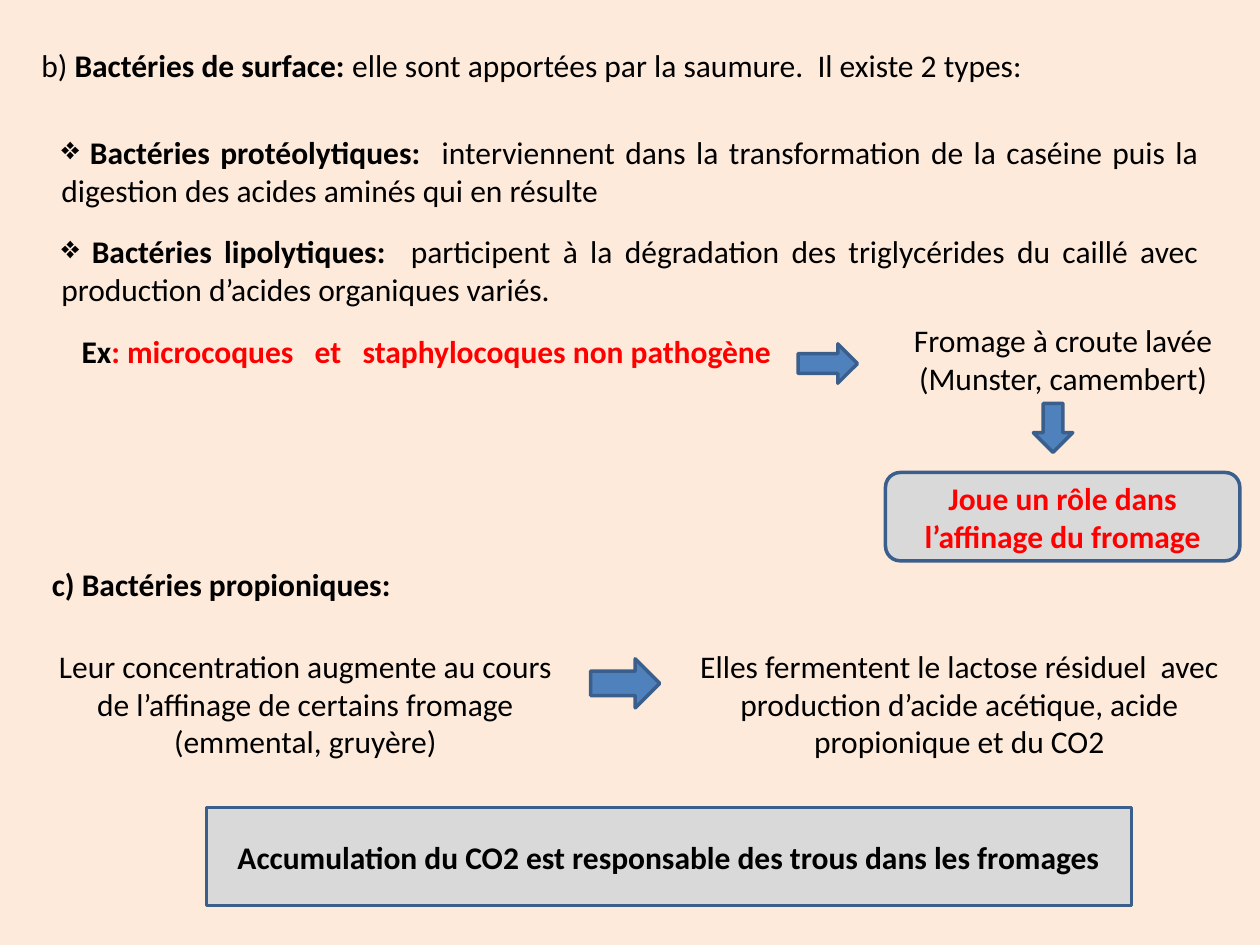
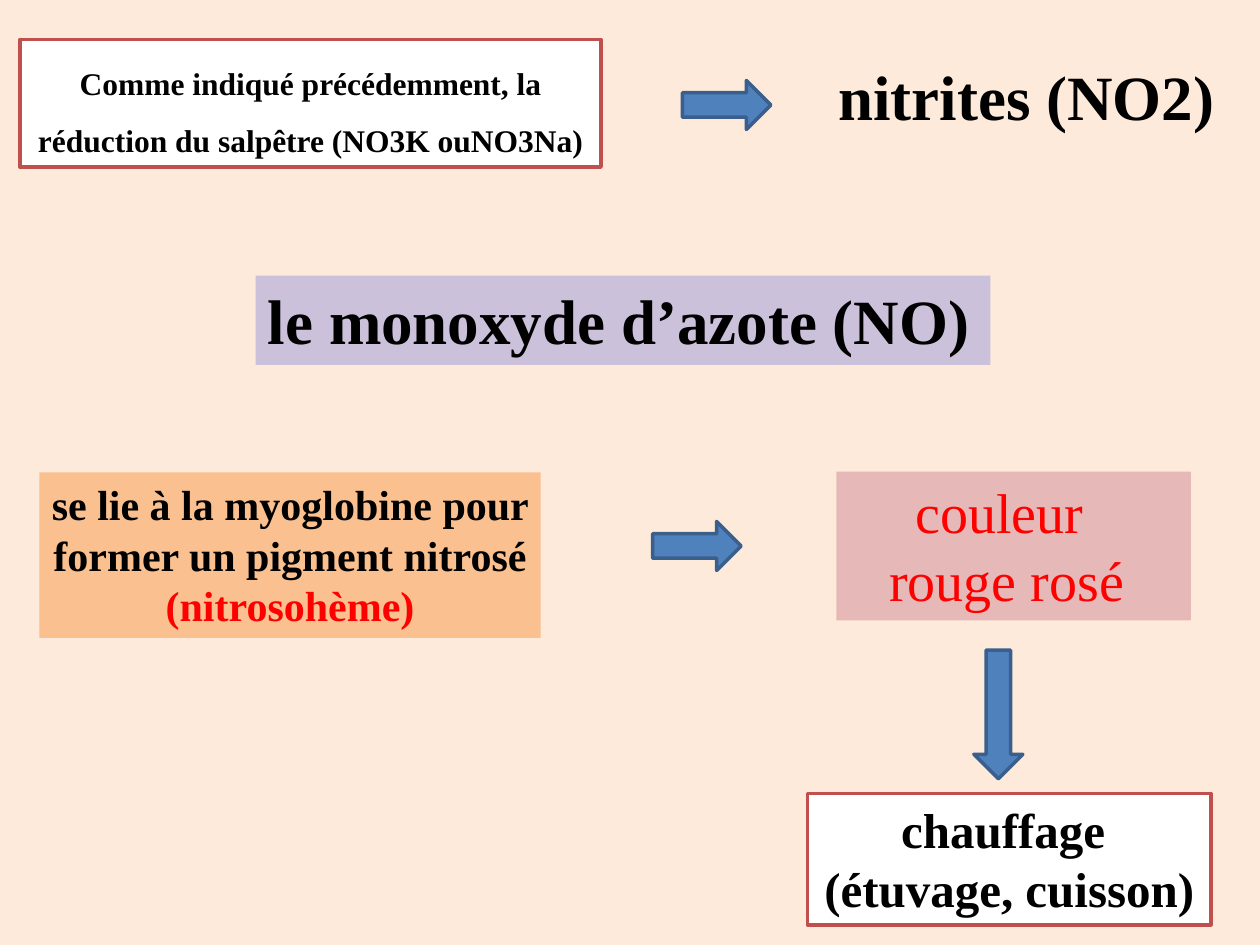
from lxml import etree
from pptx import Presentation
from pptx.dml.color import RGBColor
from pptx.enum import shapes, text
from pptx.oxml import ns
from pptx.util import Pt

CREAM = RGBColor(0xFD, 0xEA, 0xDA)
BLACK = RGBColor(0, 0, 0)
WHITE = RGBColor(255, 255, 255)
RED = RGBColor(255, 0, 0)
BLUE = RGBColor(0x4F, 0x81, 0xBD)
NAVY = RGBColor(0x3A, 0x5F, 0x8C)
BRICK = RGBColor(0xC0, 0x50, 0x4D)
GREY = RGBColor(0xD9, 0xD9, 0xD9)
LILAC = RGBColor(0xCC, 0xC1, 0xDA)
ORANGE = RGBColor(0xFA, 0xC0, 0x90)
PINK = RGBColor(0xE6, 0xB9, 0xB8)

SHAPE = shapes.MSO_SHAPE
RIGHT, DOWN = SHAPE.RIGHT_ARROW, SHAPE.DOWN_ARROW
LEFT, CENTER, JUSTIFY = text.PP_ALIGN.LEFT, text.PP_ALIGN.CENTER, text.PP_ALIGN.JUSTIFY

# Runs are (text, bold, colour); boxes are (left, top, width, height) in points
BULLETED = dict(align=JUSTIFY, bullet="❖")
CENTERED = dict(align=CENTER)
KEY_BOX = dict(align=CENTER, fill=GREY, line=NAVY, middle=True)
FRAMED = dict(align=CENTER, fill=WHITE, line=BRICK)

BACTERIA = dict(
    font="Calibri",
    blocks=[
        ((16.5, 22.5, 602, 29),
         [[("b) ", False, BLACK), ("Bactéries de surface:", True, BLACK),
           (" elle sont apportées par la saumure.  Il existe 2 types:", False, BLACK)]], {}),
        ((28, 72.5, 664, 51),
         [[(" Bactéries protéolytiques:  ", True, BLACK),
           ("interviennent dans la transformation de la caséine puis la "
            "digestion des acides aminés qui en résulte", False, BLACK)]], BULLETED),
        ((28, 129, 664, 51),
         [[(" Bactéries lipolytiques:  ", True, BLACK),
           ("participent à la dégradation des triglycérides du caillé avec "
            "production d’acides organiques variés.", False, BLACK)]], BULLETED),
        ((39.5, 186, 461.5, 29),
         [[("Ex", True, BLACK),
           (": microcoques   et   staphylocoques non pathogène", True, RED)]], {}),
        ((500.5, 180, 214, 51),
         [[("Fromage à croute lavée (Munster, camembert)", False, BLACK)]], CENTERED),
        ((506, 270, 202.5, 50.5),
         [[("Joue un rôle dans l’affinage du fromage", True, RED)]],
         dict(KEY_BOX, preset=SHAPE.ROUNDED_RECTANGLE)),
        ((22.5, 319.5, 276, 29), [[("c) Bactéries propioniques:", True, BLACK)]], {}),
        ((22.5, 366, 304, 73),
         [[("Leur concentration augmente au cours de l’affinage de certains "
            "fromage (emmental, gruyère)", False, BLACK)]], CENTERED),
        ((388, 366, 320.5, 73),
         [[("Elles fermentent le lactose résiduel  avec production d’acide "
            "acétique, acide propionique et du CO2", False, BLACK)]], CENTERED),
        ((118, 461.5, 528.5, 56),
         [[("Accumulation du CO2 est responsable des trous dans les fromages",
            True, BLACK)]], KEY_BOX),
    ],
    arrows=[(RIGHT, (456, 196.5, 34, 22.5)), (DOWN, (590.5, 230.5, 22.5, 28)),
            (RIGHT, (337.5, 376.5, 39.5, 28))],
)

NITRITES = dict(
    font="Times New Roman",
    blocks=[
        ((11.5, 22.5, 332, 73),
         [[("Comme indiqué précédemment, la réduction du salpêtre (NO3K ouNO3Na)",
            True, BLACK)]], dict(FRAMED, spacing=1.5)),
        ((472, 29.5, 240.5, 51), [[("nitrites (NO2)", True, BLACK)]],
         dict(size=36, wrap=False)),
        ((146, 157.5, 420, 51), [[("le monoxyde d’azote (NO)", True, BLACK)]],
         dict(size=36, wrap=False, fill=LILAC)),
        ((22.5, 270, 286.5, 94.5),
         [[("se lie à la myoglobine pour former un pigment nitrosé ", True, BLACK),
           ("(nitrosohème)", True, RED)]], dict(size=24, align=CENTER, fill=ORANGE)),
        ((478, 269.5, 202.5, 85), [[("couleur   rouge rosé ", False, RED)]],
         dict(size=32, align=CENTER, fill=PINK)),
        ((461.5, 453.5, 230.5, 75),
         [[("chauffage ", True, BLACK)], [("(étuvage, cuisson)", True, BLACK)]],
         dict(FRAMED, size=28)),
    ],
    arrows=[(RIGHT, (390, 46, 50.5, 28)), (RIGHT, (373, 298, 50.5, 28)),
            (DOWN, (556.5, 371.5, 28, 73.5))],
)


def add_preset(slide, preset, box, fill, line):
    shape = slide.shapes.add_shape(preset, *map(Pt, box))
    shape.shadow.inherit = False
    shape.fill.solid()
    shape.fill.fore_color.rgb = fill
    if line is None:
        shape.line.fill.background()
    else:
        shape.line.color.rgb = line
        shape.line.width = Pt(2)
    return shape


def add_bullet(paragraph, character):
    properties = paragraph._p.get_or_add_pPr()
    properties.set("marL", "0")
    properties.set("indent", "0")
    etree.SubElement(properties, ns.qn("a:buChar")).set("char", character)


def add_text(slide, box, paragraphs, *, font, size=18, align=LEFT, spacing=None,
             bullet=None, wrap=True, fill=None, line=None, middle=False,
             preset=SHAPE.RECTANGLE):
    if fill is None:
        shape = slide.shapes.add_textbox(*map(Pt, box))
    else:
        shape = add_preset(slide, preset, box, fill, line)
    frame = shape.text_frame
    frame.word_wrap = wrap
    frame.vertical_anchor = text.MSO_ANCHOR.MIDDLE if middle else text.MSO_ANCHOR.TOP
    frame.auto_size = (text.MSO_AUTO_SIZE.NONE if middle
                       else text.MSO_AUTO_SIZE.SHAPE_TO_FIT_TEXT)
    for index, runs in enumerate(paragraphs):
        paragraph = frame.add_paragraph() if index else frame.paragraphs[0]
        paragraph.alignment = align
        if spacing:
            paragraph.line_spacing = spacing
        if bullet:
            add_bullet(paragraph, bullet)
        for words, bold, colour in runs:
            run = paragraph.add_run()
            run.text = words
            run.font.name = font
            run.font.size = Pt(size)
            run.font.bold = bold
            run.font.color.rgb = colour


def build_slide(presentation, content):
    slide = presentation.slides.add_slide(presentation.slide_layouts[6])
    slide.background.fill.solid()
    slide.background.fill.fore_color.rgb = CREAM
    for box, paragraphs, style in content["blocks"]:
        add_text(slide, box, paragraphs, font=content["font"], **style)
    for preset, box in content["arrows"]:
        add_preset(slide, preset, box, BLUE, NAVY)


def main():
    presentation = Presentation()
    presentation.slide_width, presentation.slide_height = Pt(720), Pt(540)
    for content in (BACTERIA, NITRITES):
        build_slide(presentation, content)
    presentation.save("out.pptx")


if __name__ == "__main__":
    main()
